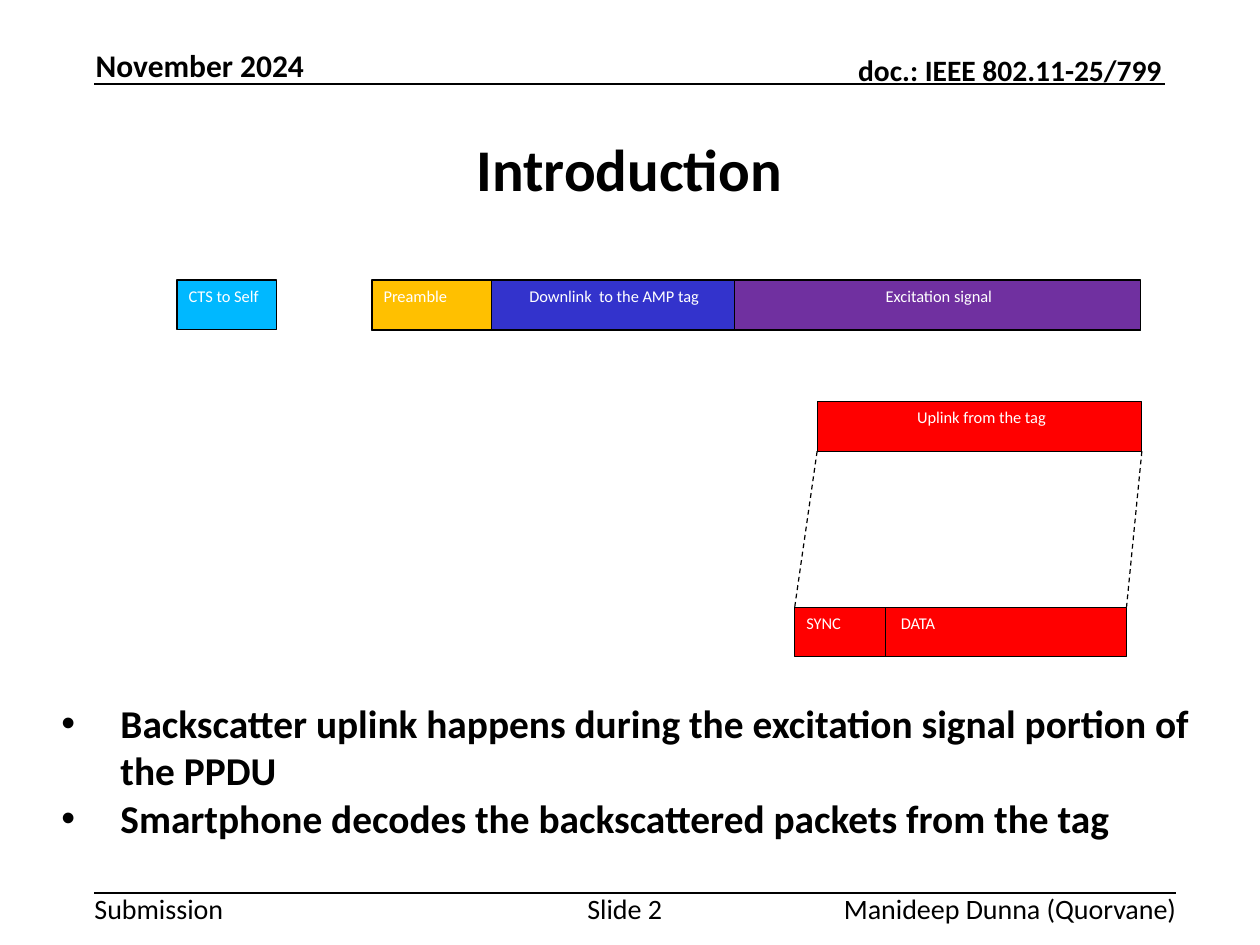
from lxml import etree
from pptx import Presentation
from pptx.dml.color import RGBColor
from pptx.enum.dml import MSO_LINE
from pptx.enum.shapes import MSO_CONNECTOR, MSO_SHAPE
from pptx.enum.text import MSO_ANCHOR, MSO_AUTO_SIZE, PP_ALIGN
from pptx.oxml.ns import qn
from pptx.util import Inches, Pt

LEFT, CENTER, RIGHT = PP_ALIGN.LEFT, PP_ALIGN.CENTER, PP_ALIGN.RIGHT
TOP, MIDDLE, BOTTOM = MSO_ANCHOR.TOP, MSO_ANCHOR.MIDDLE, MSO_ANCHOR.BOTTOM
RECTANGLE, STRAIGHT = MSO_SHAPE.RECTANGLE, MSO_CONNECTOR.STRAIGHT
NO_AUTOFIT, DASH = MSO_AUTO_SIZE.NONE, MSO_LINE.DASH

BLACK = RGBColor(0x00, 0x00, 0x00)
WHITE = RGBColor(0xFF, 0xFF, 0xFF)
GREEN = RGBColor(0x00, 0x99, 0x73)
PURPLE = RGBColor(0x70, 0x30, 0xA0)
BLUE = RGBColor(0x33, 0x33, 0xCC)
RED = RGBColor(0xFF, 0x00, 0x00)
AMBER = RGBColor(0xFF, 0xC0, 0x00)
SKY = RGBColor(0x00, 0xB8, 0xFF)

FONT = "Calibri"
BAR_HEIGHT = 0.42
DOWNLINK_TOP, UPLINK_TOP, DETAIL_TOP = 2.37, 3.4, 5.14


def write_text(frame, *lines, size, color=BLACK, bold=False, align=LEFT,
               anchor=TOP, inset=None):
    """Fill a text frame with one paragraph per line."""
    frame.word_wrap = True
    frame.auto_size = NO_AUTOFIT
    frame.vertical_anchor = anchor
    if inset is not None:
        frame.margin_left = frame.margin_right = Inches(inset)
        frame.margin_top = frame.margin_bottom = Inches(inset)
    for index, line in enumerate(lines):
        paragraph = frame.add_paragraph() if index else frame.paragraphs[0]
        paragraph.alignment = align
        paragraph.space_before = Pt(0)
        run = paragraph.add_run()
        run.text = line
        run.font.name = FONT
        run.font.size = Pt(size)
        run.font.bold = bold
        run.font.color.rgb = color


def place(shape, left, top, width, height):
    shape.left, shape.top = Inches(left), Inches(top)
    shape.width, shape.height = Inches(width), Inches(height)


def add_label(slide, text, left, top, width, height, **text_format):
    label = slide.shapes.add_textbox(
        Inches(left), Inches(top), Inches(width), Inches(height))
    write_text(label.text_frame, text, inset=0, **text_format)


def add_bar(slide, text, left, top, width, fill, align=LEFT):
    bar = slide.shapes.add_shape(
        RECTANGLE, Inches(left), Inches(top), Inches(width), Inches(BAR_HEIGHT))
    bar.shadow.inherit = False
    bar.fill.solid()
    bar.fill.fore_color.rgb = fill
    bar.line.color.rgb = BLACK
    bar.line.width = Pt(0.75)
    if text:
        write_text(bar.text_frame, text, size=10, color=WHITE, align=align)


def add_line(slide, x1, y1, x2, y2, width=1.0, dash=None):
    line = slide.shapes.add_connector(
        STRAIGHT, Inches(x1), Inches(y1), Inches(x2), Inches(y2))
    line.line.color.rgb = BLACK
    line.line.width = Pt(width)
    if dash:
        line.line.dash_style = dash
    etree.SubElement(line._element.spPr, qn("a:effectLst"))


def add_bullets(frame, indent):
    for paragraph in frame.paragraphs:
        properties = paragraph._p.get_or_add_pPr()
        properties.set("marL", str(Inches(indent)))
        properties.set("indent", str(-Inches(indent)))
        etree.SubElement(properties, qn("a:buFont"), typeface="Arial")
        etree.SubElement(properties, qn("a:buChar"), char="•")


def add_header_and_footer(slide):
    add_line(slide, 0.8, 0.71, 9.87, 0.71)
    add_line(slide, 0.8, 7.56, 9.96, 7.56)
    add_label(slide, "November 2024", 0.81, 0.39, 2.19, 0.32,
              size=19.2, bold=True, anchor=BOTTOM)
    add_label(slide, "doc.: IEEE 802.11-25/799", 6.01, 0.44, 3.83, 0.3,
              size=18, bold=True, align=RIGHT, anchor=BOTTOM)
    for text, left, width, align in (
            ("Submission", 0.8, 1.12, LEFT),
            ("Slide 2", 4.89, 0.8, CENTER),
            ("Manideep Dunna (Quorvane)", 6.25, 3.71, RIGHT)):
        add_label(slide, text, left, 7.55, width, 0.3, size=17.1, align=align)


def add_frame_diagram(slide):
    # Whole PPDU behind its fields
    add_bar(slide, "", 3.15, DOWNLINK_TOP + 0.01, 6.51, GREEN)
    for text, left, top, width, fill, align in (
            (" Excitation signal", 6.21, DOWNLINK_TOP, 3.45, PURPLE, CENTER),
            (" Downlink  to the AMP tag", 4.15, DOWNLINK_TOP, 2.07, BLUE, CENTER),
            ("Preamble", 3.15, DOWNLINK_TOP, 1.01, AMBER, LEFT),
            ("CTS to Self", 1.5, DOWNLINK_TOP, 0.84, SKY, LEFT),
            (" Uplink from the tag", 6.92, UPLINK_TOP, 2.75, RED, CENTER),
            ("SYNC", 6.73, DETAIL_TOP, 0.77, RED, LEFT),
            (" DATA", 7.5, DETAIL_TOP, 2.04, RED, LEFT)):
        add_bar(slide, text, left, top, width, fill, align)

    # Dashed guides from the uplink corners to its expanded fields
    for uplink_x, detail_x in ((6.92, 6.73), (9.67, 9.54)):
        add_line(slide, uplink_x, UPLINK_TOP + BAR_HEIGHT, detail_x, DETAIL_TOP,
                 width=0.75, dash=DASH)


def main():
    presentation = Presentation()
    presentation.slide_width = Inches(10.67)
    presentation.slide_height = Inches(8)
    slide = presentation.slides.add_slide(presentation.slide_layouts[1])

    add_header_and_footer(slide)

    # Title
    title = slide.shapes.title
    place(title, 0.8, 0.8, 9.06, 1.24)
    write_text(title.text_frame, "Introduction", size=36, bold=True,
               align=CENTER, anchor=MIDDLE)

    add_frame_diagram(slide)

    # Key points
    key_points = slide.placeholders[1]
    place(key_points, 0.42, 5.87, 10, 1.31)
    write_text(
        key_points.text_frame,
        "Backscatter uplink happens during the excitation signal portion of the PPDU",
        "Smartphone decodes the backscattered packets from the tag",
        size=24, bold=True)
    add_bullets(key_points.text_frame, 0.5)

    presentation.save("out.pptx")


if __name__ == "__main__":
    main()
